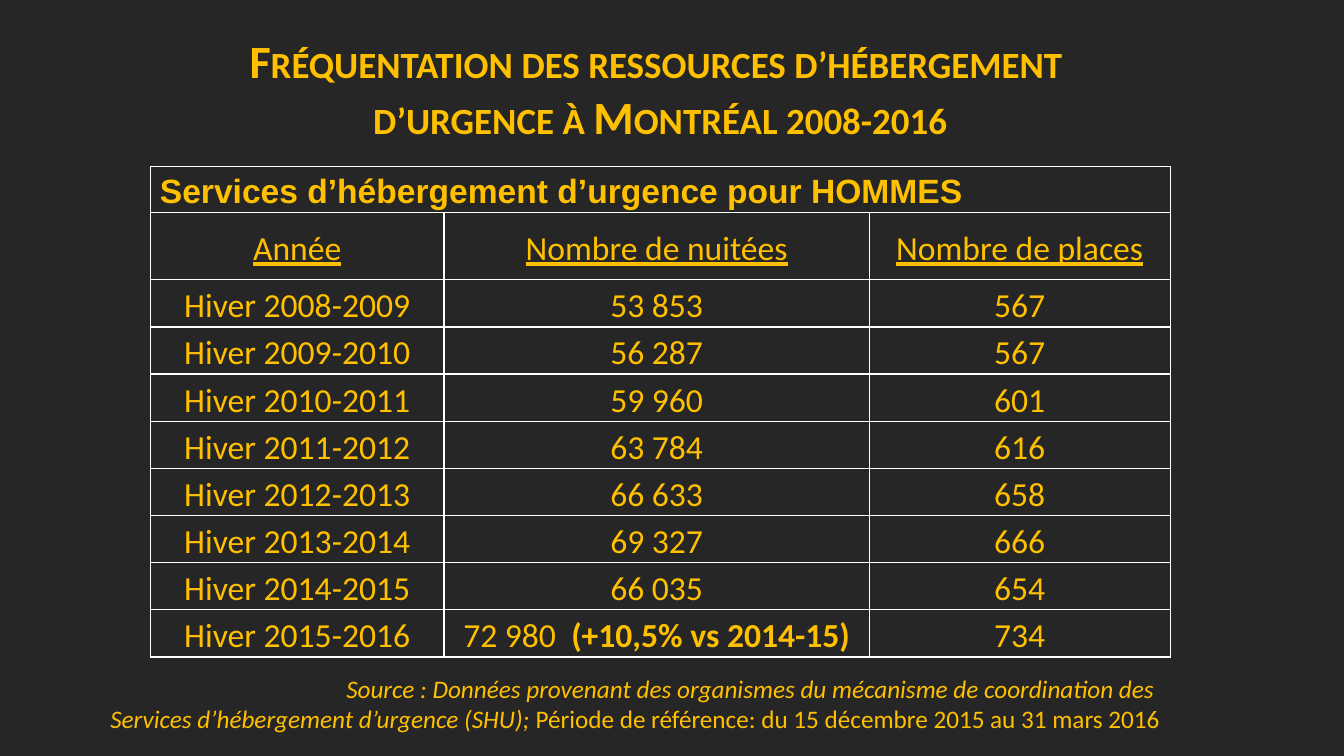
from lxml import etree
from pptx import Presentation
from pptx.dml.color import RGBColor
from pptx.enum import text as t
from pptx.oxml import ns
from pptx.util import Cm, Pt

GOLD = RGBColor(0xFF, 0xC0, 0x00)
DARK = RGBColor(0x26, 0x26, 0x26)
WHITE = RGBColor(0xFF, 0xFF, 0xFF)

TITLE = ["Fréquentation des ressources d’hébergement ",
         "d’urgence à Montréal 2008-2016"]
GROUP = "Services d’hébergement d’urgence pour HOMMES"
HEADS = ["Année", "Nombre de nuitées", "Nombre de places"]
NIGHTS = ["53 853", "56 287", "59 960", "63 784",
          "66 633", "69 327", "66 035", "72\u00a0980  "]
BEDS = [567, 567, 601, 616, 658, 666, 654, 734]
RISE = "(+10,5% vs 2014-15)"
SOURCE = ["Source\u00a0: Données provenant des organismes du mécanisme de coordination des ",
          "Services d’hébergement d’urgence (SHU); "]
PERIOD = "Période de référence: du 15 décembre 2015 au 31 mars 2016"


def style(run, size, face="Calibri", bold=False, italic=False, under=False):
    """Format one run in gold."""
    font = run.font
    font.size, font.name = Pt(size), face
    font.bold, font.italic, font.underline = bold, italic, under
    font.color.rgb = GOLD


def edge(cell):
    """Draw a thin white border on all sides of a cell."""
    props = cell._tc.get_or_add_tcPr()
    for side in ("lnL", "lnR", "lnT", "lnB"):
        line = etree.SubElement(props, ns.qn(f"a:{side}"), w=str(Pt(1)))
        fill = etree.SubElement(line, ns.qn("a:solidFill"))
        etree.SubElement(fill, ns.qn("a:srgbClr"), val=str(WHITE))


def write(cell, words, align=t.PP_ALIGN.CENTER, **look):
    """Fill one table cell with formatted text."""
    cell.text_frame.text = words
    cell.vertical_anchor = t.MSO_ANCHOR.MIDDLE
    cell.margin_left = cell.margin_right = Cm(0.24)
    cell.margin_top = cell.margin_bottom = 0
    para = cell.text_frame.paragraphs[0]
    para.alignment, para.line_spacing = align, 1.15
    style(para.runs[0], 24, **look)


def head(slide, x, y, w, h):
    """Place the title in its box, in small capitals."""
    shape = slide.shapes.title
    shape.left, shape.top, shape.width, shape.height = x, y, w, h
    frame = shape.text_frame
    frame.text = "\n".join(TITLE)
    frame.auto_size = t.MSO_AUTO_SIZE.NONE
    frame.vertical_anchor = t.MSO_ANCHOR.TOP
    for para in frame.paragraphs:
        para.alignment = t.PP_ALIGN.CENTER
        style(para.runs[0], 33, bold=True)
        para.runs[0].font._element.set("cap", "small")


def grid(slide, x, y, w, h):
    """Place the table of nights and beds per winter in its box."""
    rows = [[f"Hiver {2008 + i}-{2009 + i}", nights, str(beds)]
            for i, (nights, beds) in enumerate(zip(NIGHTS, BEDS))]
    count = len(rows) + 2
    table = slide.shapes.add_table(count, 3, x, y, w, h).table
    table.first_row = table.horz_banding = False
    for col, share in zip(table.columns, (0.288, 0.417, 0.295)):
        col.width = int(w * share)
    tall = Cm(1.69)
    for i, row in enumerate(table.rows):
        row.height = tall if i == 1 else (h - tall) // (count - 1)
    for cell in table.iter_cells():
        edge(cell)
        cell.fill.background()
    table.cell(0, 0).merge(table.cell(0, 2))
    write(table.cell(0, 0), GROUP, t.PP_ALIGN.LEFT, face="Arial", bold=True)
    for r, row in enumerate([HEADS] + rows, 1):
        for c, words in enumerate(row):
            write(table.cell(r, c), words, under=r == 1)
    rise = table.cell(count - 1, 1).text_frame.paragraphs[0].add_run()
    rise.text = RISE
    style(rise, 24, bold=True)


def foot(slide, x, y, w, h):
    """Place the source note in its box."""
    frame = slide.shapes.add_textbox(x, y, w, h).text_frame
    frame.word_wrap = True
    frame.text = "\n".join(SOURCE)
    for para in frame.paragraphs:
        para.alignment = t.PP_ALIGN.RIGHT
        style(para.runs[0], 18, italic=True)
    run = frame.paragraphs[-1].add_run()
    run.text = PERIOD
    style(run, 18)


def main():
    """Build and save the slide."""
    deck = Presentation()
    deck.slide_width, deck.slide_height = Cm(33.87), Cm(19.05)
    slide = deck.slides.add_slide(deck.slide_layouts[5])
    back = slide.background.fill
    back.solid()
    back.fore_color.rgb = DARK
    head(slide, Cm(1.04), Cm(0.69), Cm(31.2), Cm(3.07))
    grid(slide, Cm(3.79), Cm(4.19), Cm(25.7), Cm(12.22))
    foot(slide, Cm(2.13), Cm(16.84), Cm(27.36), Cm(1.8))
    deck.save("out.pptx")


if __name__ == "__main__":
    main()
